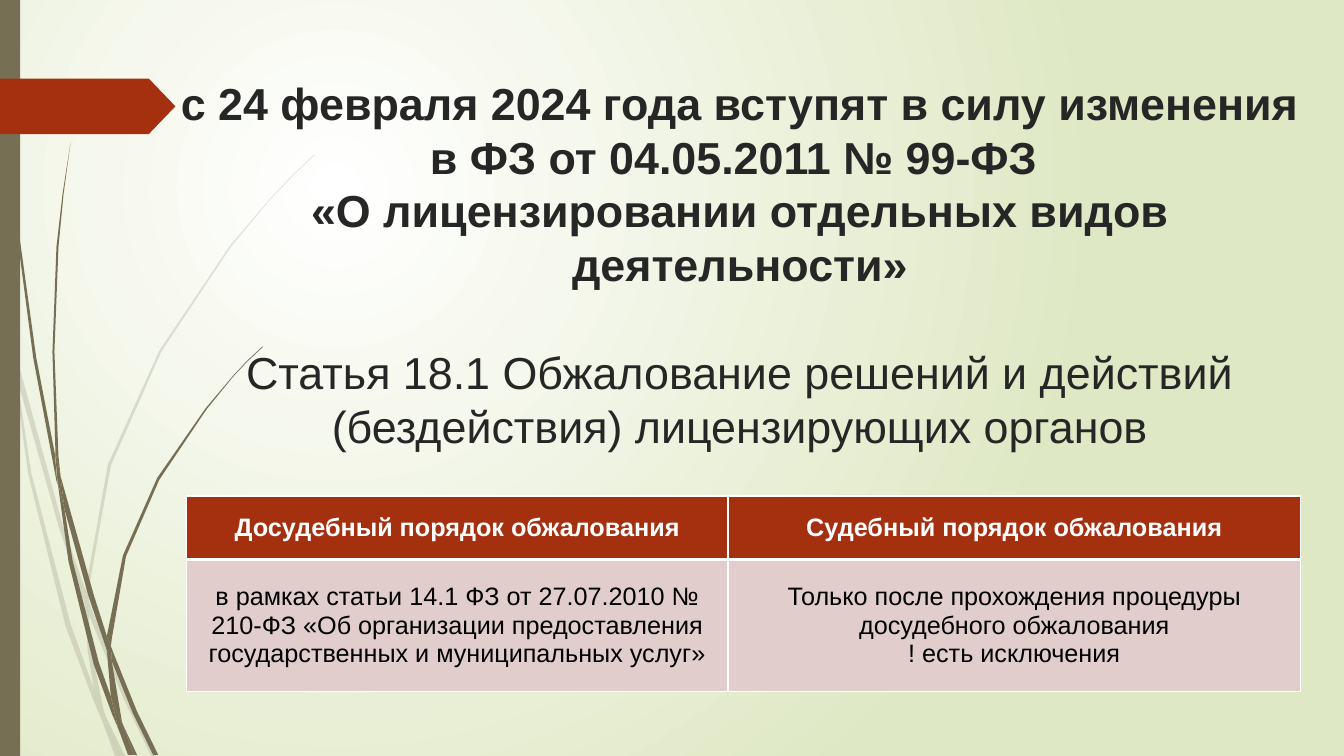
from lxml import etree
from pptx import Presentation
from pptx.dml.color import RGBColor
from pptx.enum import shapes, text
from pptx.oxml import ns, parse_xml
from pptx.util import Inches, Pt

COLORS = {
    "paper": "FFFFFF",
    "meadow": "DFE8C4",
    "stem": "766F54",
    "rust": "A53010",
    "rose": "E1CDCC",
    "heading": "262626",
    "body": "000000",
}
FONT = "Arial"

# Outlines of the stalk sections, in inches from the corner of the tuft.
PALE_STALKS = [
    [(0.11, 3.5), (0.09, 3.22), (0, 2.82), (0, 2.99), (0.1, 3.44)],
    [(0.58, 5.22), (0.84, 5.99), (0.85, 5.86), (0.62, 5.2), (0.14, 3.45), (0.17, 3.76)],
    [(0.92, 6.07), (0.88, 5.96), (0.88, 6.1), (1.23, 6.94), (1.5, 7.5), (1.55, 7.5),
     (1.27, 6.92)],
    [(1.19, 7.5), (1.24, 7.5), (1.05, 7.11)],
    [(0.93, 6.83), (0.7, 6.19), (0.31, 4.69), (0.17, 3.76), (0.11, 3.5), (0.28, 4.7),
     (0.65, 6.21), (0.92, 6.93), (1.01, 7.14), (0.99, 7.07)],
    [(0.84, 5.99), (0.87, 6.46), (0.93, 6.83), (0.96, 6.92), (1.05, 7.11), (1.03, 7.06),
     (0.91, 6.46), (0.88, 6.1), (0.88, 6.08)],
    [(0.88, 5.84), (1.1, 4.62), (1.6, 3.49), (2.29, 2.45), (2.68, 1.98), (2.9, 1.75),
     (3.12, 1.54), (3.12, 1.53), (2.89, 1.75), (2.68, 1.97), (2.28, 2.44), (1.58, 3.48),
     (1.07, 4.61), (0.85, 5.84), (0.85, 5.86), (0.88, 5.96)],
    [(1.01, 7.14), (1.14, 7.5), (1.19, 7.5)],
    [(0.88, 6.08), (0.88, 6.1), (0.88, 5.96), (0.85, 5.86), (0.84, 5.99)],
    [(0.96, 6.92), (0.93, 6.83), (0.99, 7.07), (1.01, 7.14), (1.19, 7.5), (1.05, 7.11)],
]
DARK_STALKS = [
    [(0.07, 1.1), (0.17, 2.33), (0.33, 3.55), (0.56, 4.77), (0.57, 4.81), (0.55, 4.57),
     (0.55, 4.53), (0.36, 3.55), (0.19, 2.32), (0.08, 1.09), (0.05, 0.48), (0.04, 0),
     (0.03, 0), (0.04, 0.48)],
    [(0.88, 5.92), (1.06, 6.45), (1.06, 6.31), (0.93, 5.9), (0.6, 4.72), (0.64, 5.05)],
    [(1.13, 6.49), (1.1, 6.41), (1.11, 6.56), (1.32, 7.08), (1.52, 7.49), (1.57, 7.49),
     (1.36, 7.06)],
    [(1.1, 6.91), (0.98, 6.57), (0.72, 5.56), (0.64, 5.05), (0.57, 4.77), (0.68, 5.57),
     (0.93, 6.59), (1.11, 7.08), (1.17, 7.22), (1.16, 7.17)],
    [(0.6, 4.72), (0.58, 4.53), (0.54, 3.49), (0.58, 2.45), (0.63, 1.93), (0.7, 1.41),
     (0.62, 1.93), (0.56, 2.45), (0.52, 3.49), (0.55, 4.49)],
    [(1.33, 7.49), (1.36, 7.49), (1.22, 7.19)],
    [(0.57, 4.77), (0.64, 5.05), (0.6, 4.72), (0.55, 4.49), (0.55, 4.53)],
    [(1.11, 6.33), (1.25, 5.52), (1.58, 4.76), (2.05, 4.06), (2.31, 3.74), (2.45, 3.59),
     (2.61, 3.44), (2.6, 3.44), (2.45, 3.58), (2.31, 3.73), (2.04, 4.05), (1.56, 4.74),
     (1.22, 5.51), (1.06, 6.31), (1.1, 6.41)],
    [(1.17, 7.22), (1.27, 7.49), (1.31, 7.49)],
    [(1.06, 6.45), (1.1, 6.91), (1.16, 7.06), (1.22, 7.19), (1.21, 7.16), (1.11, 6.56),
     (1.09, 6.51)],
    [(1.06, 6.45), (1.09, 6.51), (1.11, 6.56), (1.1, 6.41), (1.06, 6.31)],
    [(1.16, 7.06), (1.1, 6.91), (1.16, 7.17), (1.17, 7.22), (1.3, 7.49), (1.33, 7.49),
     (1.22, 7.19)],
]


def rgb(name):
    return RGBColor.from_string(COLORS[name])


def paint(shape, color, opacity=100):
    shape.shadow.inherit = False
    shape.line.fill.background()
    shape.fill.solid()
    shape.fill.fore_color.rgb = rgb(color)
    if opacity < 100:
        tint = shape.element.spPr.find(".//" + ns.qn("a:srgbClr"))
        etree.SubElement(tint, ns.qn("a:alpha"), val=str(opacity * 1000))


def write(paragraph, words, size=18, color="body", bold=False, before=0):
    paragraph.text = words
    paragraph.alignment = text.PP_ALIGN.CENTER
    paragraph.space_before = Pt(before)
    font = paragraph.font
    font.name, font.size, font.bold = FONT, Pt(size), bold
    font.color.rgb = rgb(color)


def add_background(slide):
    slide.background.fill.gradient()
    gradient = slide.element.find(".//" + ns.qn("a:gradFill"))
    gradient.getparent().replace(gradient, parse_xml(
        f'<a:gradFill {ns.nsdecls("a")} rotWithShape="1"><a:gsLst>'
        f'<a:gs pos="0"><a:srgbClr val="{COLORS["paper"]}"/></a:gs>'
        f'<a:gs pos="100000"><a:srgbClr val="{COLORS["meadow"]}"/></a:gs></a:gsLst>'
        '<a:path path="circle"><a:fillToRect l="50000" t="50000" r="100000" b="100000"/>'
        '</a:path></a:gradFill>'))


def add_grass(slide, left, top, stalks, opacity=100):
    for stalk in stalks:
        outline = [(left + Inches(x), top + Inches(y)) for x, y in stalk]
        builder = slide.shapes.build_freeform(*outline[0])
        builder.add_line_segments(outline[1:], close=True)
        paint(builder.convert_to_shape(), "stem", opacity)


def add_margin(slide, left, top, height):
    """Add the side bar and the pointer that crosses it."""
    bar = slide.shapes.add_shape(shapes.MSO_SHAPE.RECTANGLE, left, top, Inches(0.2), height)
    paint(bar, "stem")
    pointer = slide.shapes.add_shape(
        shapes.MSO_SHAPE.PENTAGON, left, top + Inches(0.78), Inches(1.74), Inches(0.55))
    pointer.adjustments[0] = 0.48
    paint(pointer, "rust")


def add_title(slide, left, top, width, height):
    frame = slide.shapes.add_textbox(left, top, width, height).text_frame
    frame.word_wrap = True
    frame.vertical_anchor = text.MSO_ANCHOR.TOP
    style = dict(size=32, color="heading")
    write(frame.paragraphs[0],
          "с 24 февраля 2024 года вступят в силу изменения в ФЗ от 04.05.2011 № 99-ФЗ \v"
          "«О лицензировании отдельных видов деятельности»", bold=True, **style)
    write(frame.add_paragraph(),
          "Статья 18.1 Обжалование решений и действий (бездействия) лицензирующих органов",
          before=38.5, **style)


def add_borders(cell, **points):
    """Draw white borders; sides are given in the order L, R, T, B."""
    properties = cell._tc.get_or_add_tcPr()
    for index, (side, width) in enumerate(points.items()):
        properties.insert(index, parse_xml(
            f'<a:ln{side} {ns.nsdecls("a")} w="{Pt(width)}"><a:solidFill>'
            f'<a:srgbClr val="{COLORS["paper"]}"/></a:solidFill></a:ln{side}>'))


def add_appeals(slide, left, top, column_widths, row_heights):
    rows = [
        [["Досудебный порядок обжалования"], ["Судебный порядок обжалования"]],
        [["в рамках статьи 14.1 ФЗ от 27.07.2010 № 210-ФЗ «Об организации "
          "предоставления государственных и муниципальных услуг»"],
         ["Только после прохождения процедуры досудебного обжалования",
          "! есть исключения"]],
    ]
    looks = [
        dict(fill="rust", color="paper", bold=True, borders=dict(L=1, R=1, T=1, B=3)),
        dict(fill="rose", color="body", bold=False, borders=dict(L=1, R=1, T=3, B=1)),
    ]
    table = slide.shapes.add_table(
        len(row_heights), len(column_widths), left, top,
        sum(column_widths), sum(row_heights)).table
    for column, width in zip(table.columns, column_widths):
        column.width = width
    for row, height, contents, look in zip(table.rows, row_heights, rows, looks):
        row.height = height
        for cell, lines in zip(row.cells, contents):
            cell.vertical_anchor = text.MSO_ANCHOR.MIDDLE
            cell.fill.solid()
            cell.fill.fore_color.rgb = rgb(look["fill"])
            add_borders(cell, **look["borders"])
            frame = cell.text_frame
            for number, line in enumerate(lines):
                paragraph = frame.add_paragraph() if number else frame.paragraphs[0]
                write(paragraph, line, color=look["color"], bold=look["bold"])


def main():
    deck = Presentation()
    deck.slide_width, deck.slide_height = Inches(13.33), Inches(7.5)
    slide = deck.slides.add_slide(deck.slide_layouts[6])
    add_background(slide)
    add_grass(slide, 0, 0, PALE_STALKS, opacity=20)
    add_grass(slide, 0, 0, DARK_STALKS)
    add_margin(slide, 0, 0, deck.slide_height)
    add_title(slide, Inches(1.54), Inches(0.7), Inches(11.6), Inches(4.96))
    add_appeals(slide, Inches(1.85), Inches(4.92),
                [Inches(5.37), Inches(5.68)], [Inches(0.63), Inches(1.31)])
    deck.save("out.pptx")


if __name__ == "__main__":
    main()
